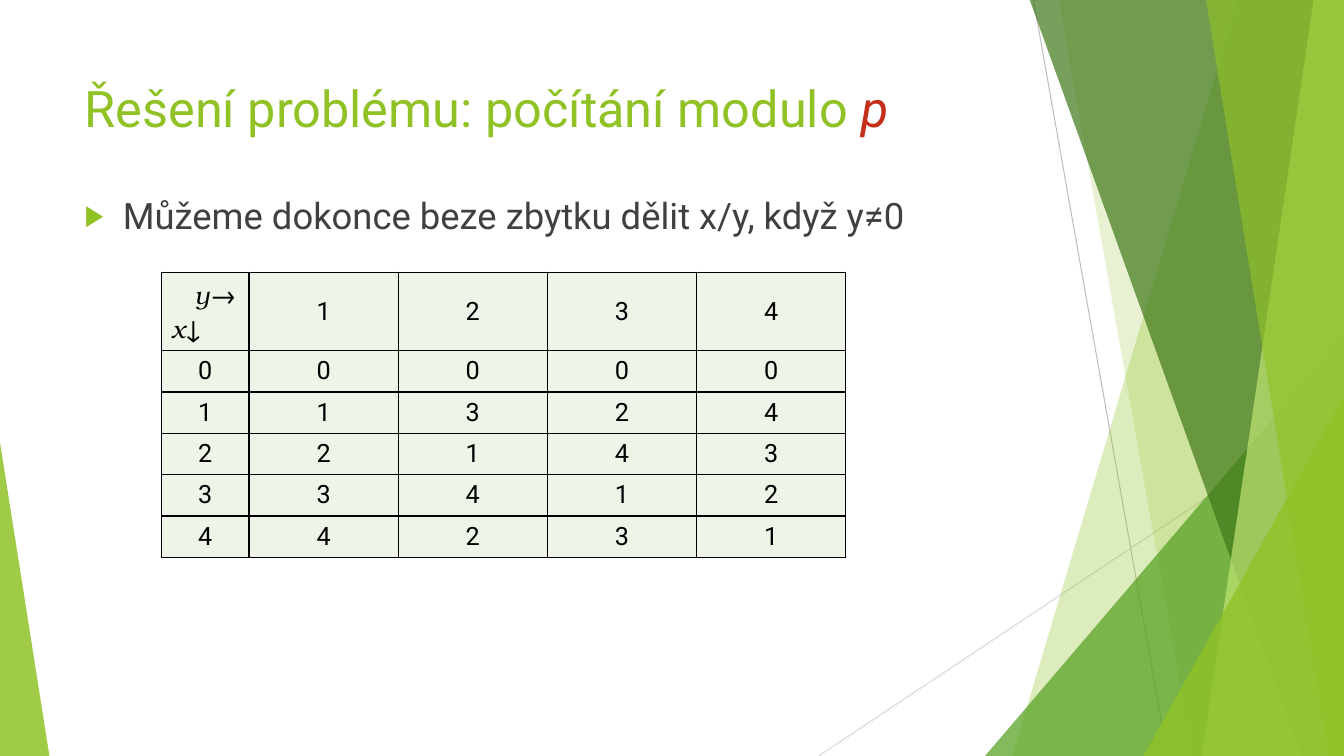
import pptx
import pptx.util
import pptx.dml.color
import pptx.enum.shapes
import pptx.enum.text
import pptx.oxml
import pptx.oxml.ns
from dataclasses import dataclass
from lxml import etree
from pptx.util import Inches


@dataclass(frozen=True)
class Theme:
    lime: str = "90C226"
    pale_lime: str = "C0E474"
    green: str = "54A021"
    dark_green: str = "3F7819"
    red: str = "C42F1A"
    body: str = "404040"
    black: str = "000000"
    cell: str = "EEF4E8"
    steep_ray: str = "BFBFBF"
    flat_ray: str = "D9D9D9"
    sans: str = "Roboto"
    math: str = "TeX Gyre Bonum"
    title_size: int = 36
    body_size: int = 26
    table_size: int = 18


theme = Theme()
WIDTH, HEIGHT = 13.33, 7.5
PRIME = 5


def add_xml(parent, tag, **attributes):
    return etree.SubElement(parent, pptx.oxml.ns.qn(tag), attributes)


def style(run, size, color, font=theme.sans, italic=False):
    run.font.size = pptx.util.Pt(size)
    run.font.name = font
    run.font.italic = italic
    run.font.color.rgb = pptx.dml.color.RGBColor.from_string(color)


deck = pptx.Presentation()
deck.slide_width, deck.slide_height = Inches(WIDTH), Inches(HEIGHT)
slide = deck.slides.add_slide(deck.slide_layouts[6])
shapes = slide.shapes

for x1, y1, x2, y2, color in [
    (10.25, 0, 11.58, HEIGHT, theme.steep_ray),
    (WIDTH, 4.03, 8.12, HEIGHT, theme.flat_ray),
]:
    ray = shapes.add_connector(
        pptx.enum.shapes.MSO_CONNECTOR.STRAIGHT,
        Inches(x1), Inches(y1), Inches(x2), Inches(y2))
    ray.line.width = pptx.util.Pt(0.75)
    ray.line.color.rgb = pptx.dml.color.RGBColor.from_string(color)
    add_xml(ray._element.spPr, "a:effectLst")

facets = [
    ("band", 12.28, 10.04, theme.lime, 30),
    ("band", 10.5, 11.83, theme.lime, 20),
    ("triangle", (9.77, 3.33, 3.56), 1, theme.green, 72),
    ("band", 10.21, 12.91, theme.dark_green, 70),
    ("band", 13.03, 11.92, theme.pale_lime, 70),
    ("band", 11.96, 13.18, theme.lime, 65),
    ("triangle", (11.34, 3.93, 1.99), 1, theme.lime, 80),
    ("triangle", (0, 4.39, 0.49), 0, theme.lime, 85),
]
for kind, start, end, color, opacity in facets:
    if kind == "band":
        outline = shapes.build_freeform(Inches(start), Inches(-0.01))
        outline.add_line_segments([
            (Inches(WIDTH), Inches(-0.01)),
            (Inches(WIDTH), Inches(HEIGHT)),
            (Inches(end), Inches(HEIGHT)),
        ])
        facet = outline.convert_to_shape()
    else:
        left, top, width = start
        facet = shapes.add_shape(
            pptx.enum.shapes.MSO_SHAPE.ISOSCELES_TRIANGLE,
            Inches(left), Inches(top), Inches(width), Inches(HEIGHT - top))
        facet.adjustments[0] = end
    facet.shadow.inherit = False
    facet.line.fill.background()
    facet.fill.solid()
    facet.fill.fore_color.rgb = pptx.dml.color.RGBColor.from_string(color)
    tint = facet._element.spPr.find(".//" + pptx.oxml.ns.qn("a:srgbClr"))
    add_xml(tint, "a:alpha", val=str(opacity * 1000))

title = shapes.add_textbox(Inches(0.74), Inches(0.67), Inches(9.4), Inches(0.79)).text_frame
title.word_wrap = True
title.vertical_anchor = pptx.enum.text.MSO_ANCHOR.MIDDLE
heading = title.paragraphs[0]
for text, color, italic in [
    ("Řešení problému: počítání modulo ", theme.lime, False),
    ("p", theme.red, True),
]:
    run = heading.add_run()
    run.text = text
    style(run, theme.title_size, color, italic=italic)

body = shapes.add_textbox(Inches(0.74), Inches(1.87), Inches(9.66), Inches(5.63)).text_frame
body.word_wrap = True
claim = body.paragraphs[0]
claim.text = "Můžeme dokonce beze zbytku dělit x/y, když y≠0"
claim.space_before = pptx.util.Pt(10)
style(claim.runs[0], theme.body_size, theme.body)
claim_format = claim._p.get_or_add_pPr()
claim_format.set("marL", str(Inches(0.38)))
claim_format.set("indent", str(Inches(-0.38)))
add_xml(add_xml(claim_format, "a:buClr"), "a:srgbClr", val=theme.lime)
add_xml(claim_format, "a:buSzPct", val="80000")
add_xml(claim_format, "a:buFont", typeface=theme.sans)
add_xml(claim_format, "a:buChar", char="▶")

division = shapes.add_table(
    PRIME + 1, PRIME, Inches(1.6), Inches(2.7), Inches(6.8), Inches(2.81)).table
division.first_row = division.horz_banding = False
for index, column in enumerate(division.columns):
    column.width = Inches(1.48 if index else 0.87)
for index, row in enumerate(division.rows):
    row.height = Inches(0.41 if index else 0.78)

quotients = [["y→\nx↓", *range(1, PRIME)]]
for x in range(PRIME):
    quotients.append([x] + [x * pow(y, PRIME - 2, PRIME) % PRIME for y in range(1, PRIME)])

for row_index, values in enumerate(quotients):
    for column_index, value in enumerate(values):
        cell = division.cell(row_index, column_index)
        cell.text_frame.text = str(value)
        cell.vertical_anchor = pptx.enum.text.MSO_ANCHOR.MIDDLE
        for side in ("a:lnL", "a:lnR", "a:lnT", "a:lnB"):
            border = add_xml(cell._tc.get_or_add_tcPr(), side, w=str(pptx.util.Pt(1)))
            add_xml(add_xml(border, "a:solidFill"), "a:srgbClr", val=theme.black)
        cell.fill.solid()
        cell.fill.fore_color.rgb = pptx.dml.color.RGBColor.from_string(theme.cell)
        if row_index or column_index:
            number = cell.text_frame.paragraphs[0]
            number.alignment = pptx.enum.text.PP_ALIGN.CENTER
            style(number.runs[0], theme.table_size, theme.black)

corner = division.cell(0, 0).text_frame
for axis in corner.paragraphs:
    letter, arrow = axis.text
    axis.text = letter
    style(axis.runs[0], theme.table_size, theme.black, theme.math, italic=True)
    pointer = axis.add_run()
    pointer.text = arrow
    style(pointer, theme.table_size, theme.black, theme.math, italic=letter == "y")
corner.paragraphs[0]._p.get_or_add_pPr().set("marL", str(Inches(0.23)))

deck.save("out.pptx")
